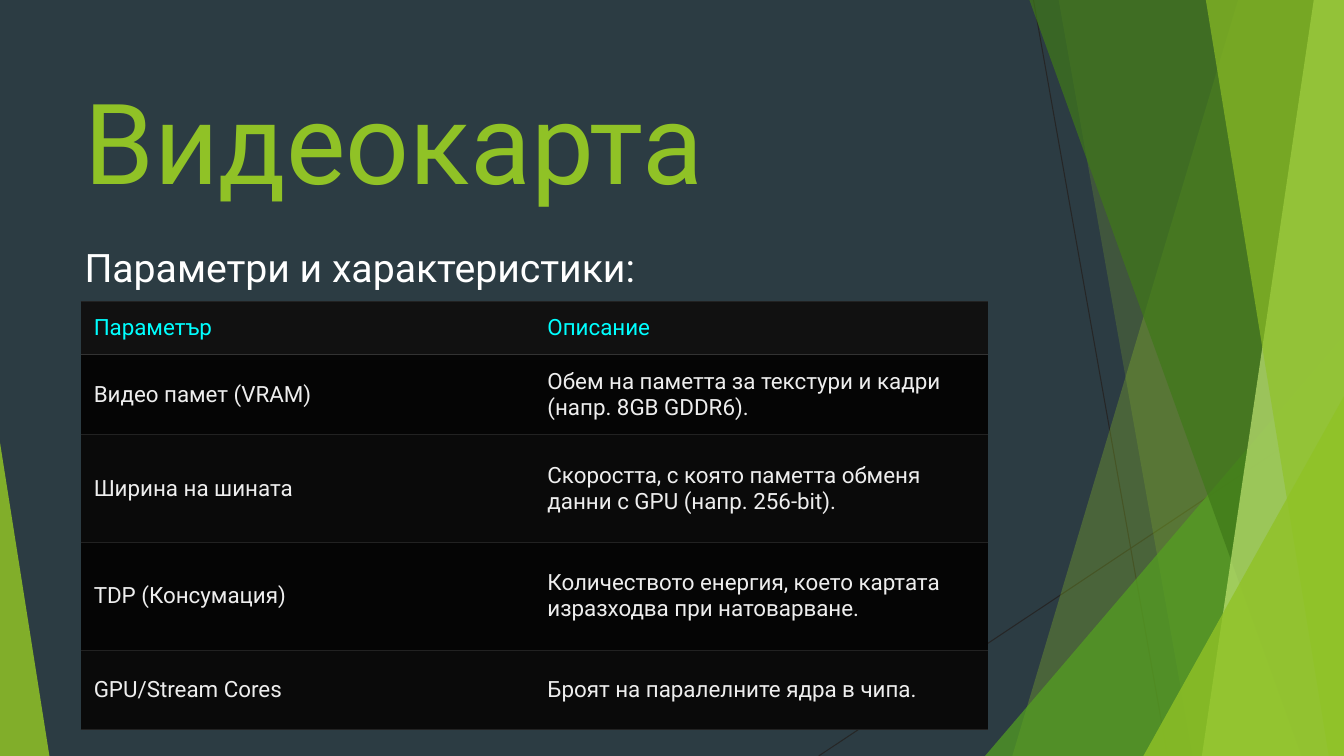
from lxml import etree
from pptx import Presentation
from pptx.dml.color import RGBColor
from pptx.enum.shapes import MSO_CONNECTOR, MSO_SHAPE
from pptx.enum.text import MSO_ANCHOR
from pptx.oxml.ns import qn
from pptx.util import Inches, Pt

STRAIGHT = MSO_CONNECTOR.STRAIGHT
TRIANGLE = MSO_SHAPE.ISOSCELES_TRIANGLE
MIDDLE = MSO_ANCHOR.MIDDLE
TOP = MSO_ANCHOR.TOP

SLATE = RGBColor(0x2C, 0x3C, 0x43)
LIME = RGBColor(0x90, 0xC2, 0x26)
GREEN = RGBColor(0x54, 0xA0, 0x21)
FOREST = RGBColor(0x3F, 0x78, 0x19)
PALE = RGBColor(0xC0, 0xE4, 0x74)
WHITE = RGBColor(0xFF, 0xFF, 0xFF)
CYAN = RGBColor(0x00, 0xFF, 0xFF)
SMOKE = RGBColor(0xEE, 0xEE, 0xEE)
INK = RGBColor(0x26, 0x26, 0x26)
HEAD = RGBColor(0x11, 0x11, 0x11)
ODD = RGBColor(0x05, 0x05, 0x05)
EVEN = RGBColor(0x0A, 0x0A, 0x0A)
RULE = RGBColor(0x22, 0x22, 0x22)
HEADRULE = RGBColor(0x33, 0x33, 0x33)

FONT = "Roboto"
WIDTH, HEIGHT = 13.33, 7.5
ROWS = [
    ("Параметър", "Описание"),
    ("Видео памет (VRAM)",
     "Обем на паметта за текстури и кадри (напр. 8GB GDDR6)."),
    ("Ширина на шината",
     "Скоростта, с която паметта обменя данни с GPU (напр. 256-bit)."),
    ("TDP (Консумация)",
     "Количеството енергия, което картата изразходва при натоварване."),
    ("GPU/Stream Cores", "Броят на паралелните ядра в чипа."),
]
HEIGHTS = [0.52, 0.79, 1.07, 1.07, 0.79]


def paint(shape, color, alpha):
    shape.shadow.inherit = False
    shape.fill.solid()
    shape.fill.fore_color.rgb = color
    shape.line.fill.background()
    tint = shape.fill._xPr.find(qn("a:solidFill"))[0]
    etree.SubElement(tint, qn("a:alpha"), val=str(alpha * 1000))


def add_line(slide, start, end):
    ends = [Inches(v) for v in start + end]
    line = slide.shapes.add_connector(STRAIGHT, *ends)
    line.line.color.rgb = INK
    line.line.width = Pt(0.75)
    etree.SubElement(line._element.spPr, qn("a:effectLst"))


def add_band(slide, box, top, base, color, alpha):
    left, upper, width, height = box
    right, lower = left + width, upper + height
    form = slide.shapes.build_freeform(Inches(left + top), Inches(upper))
    points = [(right, upper), (right, lower), (left + base, lower)]
    form.add_line_segments([(Inches(x), Inches(y)) for x, y in points])
    paint(form.convert_to_shape(), color, alpha)


def add_wedge(slide, box, size, apex, color, alpha):
    left, top, width, height = box
    wide, high = size
    x = left + (width - wide) * apex
    y = top + height - high
    wedge = slide.shapes.add_shape(
        TRIANGLE, Inches(x), Inches(y), Inches(wide), Inches(high))
    wedge.adjustments[0] = apex
    paint(wedge, color, alpha)


def add_decor(slide, box):
    left, top, width, height = box
    right, base = left + width, top + height
    add_line(slide, (left + 10.25, top), (left + 11.58, base))
    add_line(slide, (right, top + 4.03), (left + 8.12, base))
    add_band(slide, box, 12.28, 10.04, LIME, 30)
    add_band(slide, box, 10.5, 11.83, LIME, 20)
    add_wedge(slide, box, (3.56, 4.17), 1, GREEN, 72)
    add_band(slide, box, 10.21, 12.91, FOREST, 70)
    add_band(slide, box, 13.03, 11.92, PALE, 70)
    add_band(slide, box, 11.96, 13.18, LIME, 65)
    add_wedge(slide, box, (1.99, 3.57), 1, LIME, 80)
    add_wedge(slide, box, (0.49, 3.11), 0, LIME, 85)


def style(para, size, color):
    para.font.name = FONT
    para.font.size = Pt(size)
    para.font.color.rgb = color


def add_text(slide, box, text, size, color):
    frame = slide.shapes.add_textbox(*[Inches(v) for v in box]).text_frame
    frame.word_wrap = True
    frame.vertical_anchor = TOP
    frame.text = text
    style(frame.paragraphs[0], size, color)


def add_edge(cell, side, color=None, width=0):
    props = cell._tc.get_or_add_tcPr()
    edge = etree.Element(qn("a:" + side), w=str(Pt(width)))
    if color is None:
        etree.SubElement(edge, qn("a:noFill"))
    else:
        fill = etree.SubElement(edge, qn("a:solidFill"))
        etree.SubElement(fill, qn("a:srgbClr"), val=str(color))
    props.find(qn("a:solidFill")).addprevious(edge)


def fill_cell(cell, text, row):
    cell.text = text
    cell.vertical_anchor = MIDDLE
    cell.margin_left = cell.margin_right = Inches(0.13)
    cell.margin_top = cell.margin_bottom = Inches(0.13)
    cell.fill.solid()
    cell.fill.fore_color.rgb = HEAD if row == 0 else (EVEN, ODD)[row % 2]
    style(cell.text_frame.paragraphs[0], 16, SMOKE if row else CYAN)
    low = (RULE, 0.5) if row else (HEADRULE, 1)
    high = (HEADRULE, 1) if row == 1 else (RULE, 0.5)
    add_edge(cell, "lnL")
    add_edge(cell, "lnR")
    add_edge(cell, "lnT", *high)
    add_edge(cell, "lnB", *low)


def add_specs(slide, box):
    frame = slide.shapes.add_table(
        len(ROWS), len(ROWS[0]), *[Inches(v) for v in box])
    table = frame.table
    for col in table.columns:
        col.width = Inches(box[2] / len(ROWS[0]))
    for row, texts in enumerate(ROWS):
        table.rows[row].height = Inches(HEIGHTS[row])
        for col, text in enumerate(texts):
            fill_cell(table.cell(row, col), text, row)


def add_main(slide, box):
    left, top, width, height = box
    add_text(slide, (left, top, width, 1.44), "Видеокарта", 80, LIME)
    add_text(slide, (left, top + 1.69, width, 0.6),
             "Параметри и характеристики:", 28, WHITE)
    add_specs(slide, (left + 0.06, top + 2.32, 9, sum(HEIGHTS)))


def main():
    deck = Presentation()
    deck.slide_width = Inches(WIDTH)
    deck.slide_height = Inches(HEIGHT)
    slide = deck.slides.add_slide(deck.slide_layouts[6])
    slide.background.fill.solid()
    slide.background.fill.fore_color.rgb = SLATE
    add_decor(slide, (0, 0, WIDTH, HEIGHT))
    add_main(slide, (0.74, 0.67, 9.4, 6.56))
    deck.save("out.pptx")


if __name__ == "__main__":
    main()
